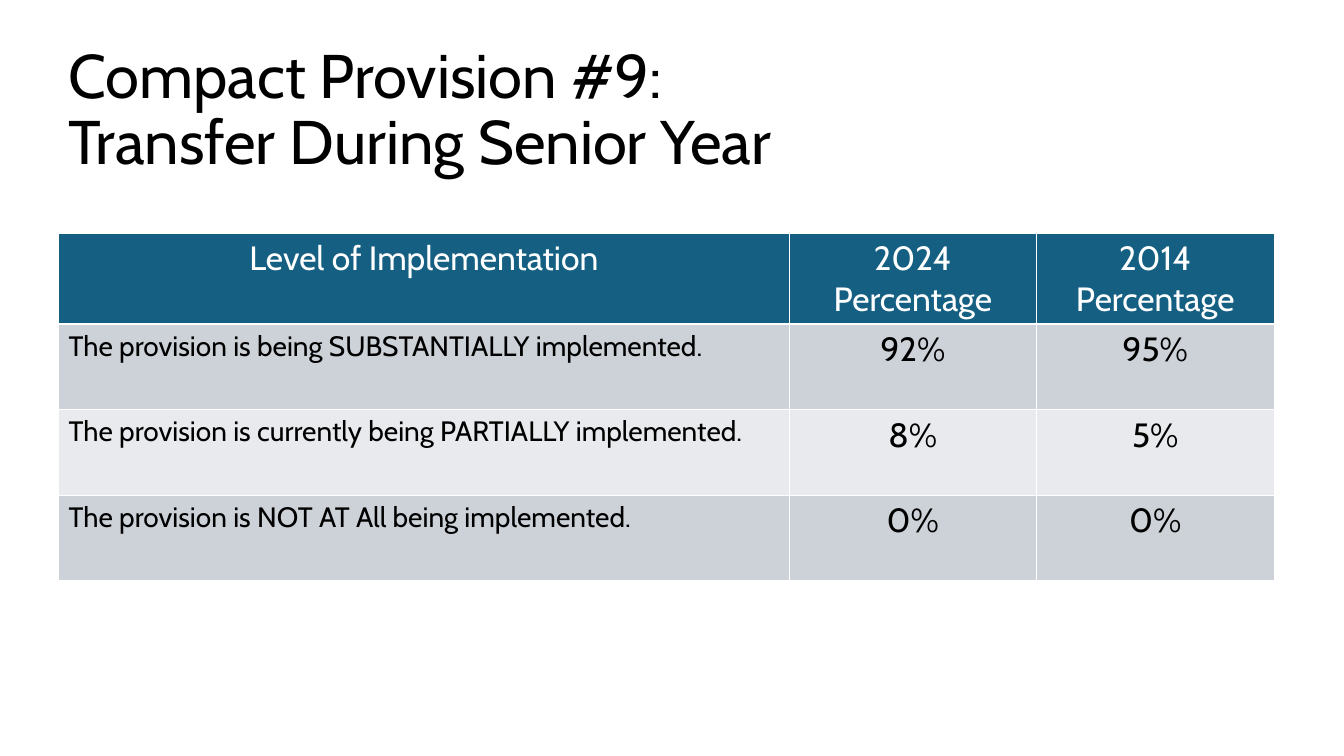
from lxml.etree import SubElement
from pptx import Presentation
from pptx.dml.color import RGBColor
from pptx.enum.text import MSO_ANCHOR, PP_ALIGN
from pptx.oxml.ns import qn
from pptx.util import Pt

FONT = "Cabin"
BLACK, WHITE, BLUE = "000000", "FFFFFF", "156082"
BANDS = ["CCD2D8", "E8EAED"]
LEFT = 41.8
WIDTHS = [522, 176.4, 169.9]
HEIGHTS = [64.8, 61.2, 61.2, 61.2]
ROWS = [
    ["Level of Implementation", "2024 Percentage", "2014 Percentage"],
    ["The provision is being SUBSTANTIALLY implemented.", "92%", "95%"],
    ["The provision is currently being PARTIALLY implemented.", "8%", "5%"],
    ["The provision is NOT AT All being implemented.", "0%", "0%"],
]


def paint(fmt, color):
    fmt.solid()
    fmt.fore_color.rgb = RGBColor.from_string(color)


def write(frame, text, size, color, align=PP_ALIGN.LEFT):
    frame.word_wrap = True
    para = frame.paragraphs[0]
    para.text = text
    para.alignment = align
    for run in para.runs:
        run.font.name = FONT
        run.font.size = Pt(size)
        run.font.bold = False
        paint(run.font.fill, color)
    return para


def add_title(slide, text):
    box = slide.shapes.add_textbox(Pt(LEFT), Pt(27.4), Pt(828), Pt(104.4))
    box.text_frame.vertical_anchor = MSO_ANCHOR.MIDDLE
    write(box.text_frame, text, 44, BLACK).line_spacing = 0.9


def add_edges(cell, color, width):
    props = cell._tc.get_or_add_tcPr()
    for spot, side in enumerate(["lnL", "lnR", "lnT", "lnB"]):
        line = SubElement(props, qn("a:" + side), w=str(Pt(width)))
        fill = SubElement(line, qn("a:solidFill"))
        SubElement(fill, qn("a:srgbClr"), val=color)
        props.insert(spot, line)


def fill_cell(cell, text, row, col):
    head = row == 0
    label = col == 0 and not head
    paint(cell.fill, BLUE if head else BANDS[(row - 1) % 2])
    write(cell.text_frame, text, 20 if label else 24,
          WHITE if head else BLACK,
          PP_ALIGN.LEFT if label else PP_ALIGN.CENTER)
    add_edges(cell, WHITE, 1)


def add_grid(slide):
    frame = slide.shapes.add_table(
        len(ROWS), len(WIDTHS), Pt(LEFT), Pt(166.6),
        Pt(sum(WIDTHS)), Pt(sum(HEIGHTS)))
    table = frame.table
    for col, width in zip(table.columns, WIDTHS):
        col.width = Pt(width)
    for row, height in zip(table.rows, HEIGHTS):
        row.height = Pt(height)
    for row, texts in enumerate(ROWS):
        for col, text in enumerate(texts):
            fill_cell(table.cell(row, col), text, row, col)


def main():
    deck = Presentation()
    deck.slide_width, deck.slide_height = Pt(960), Pt(540)
    slide = deck.slides.add_slide(deck.slide_layouts[6])
    paint(slide.background.fill, WHITE)
    add_title(slide, "Compact Provision #9: \vTransfer During Senior Year")
    add_grid(slide)
    deck.save("out.pptx")


if __name__ == "__main__":
    main()
